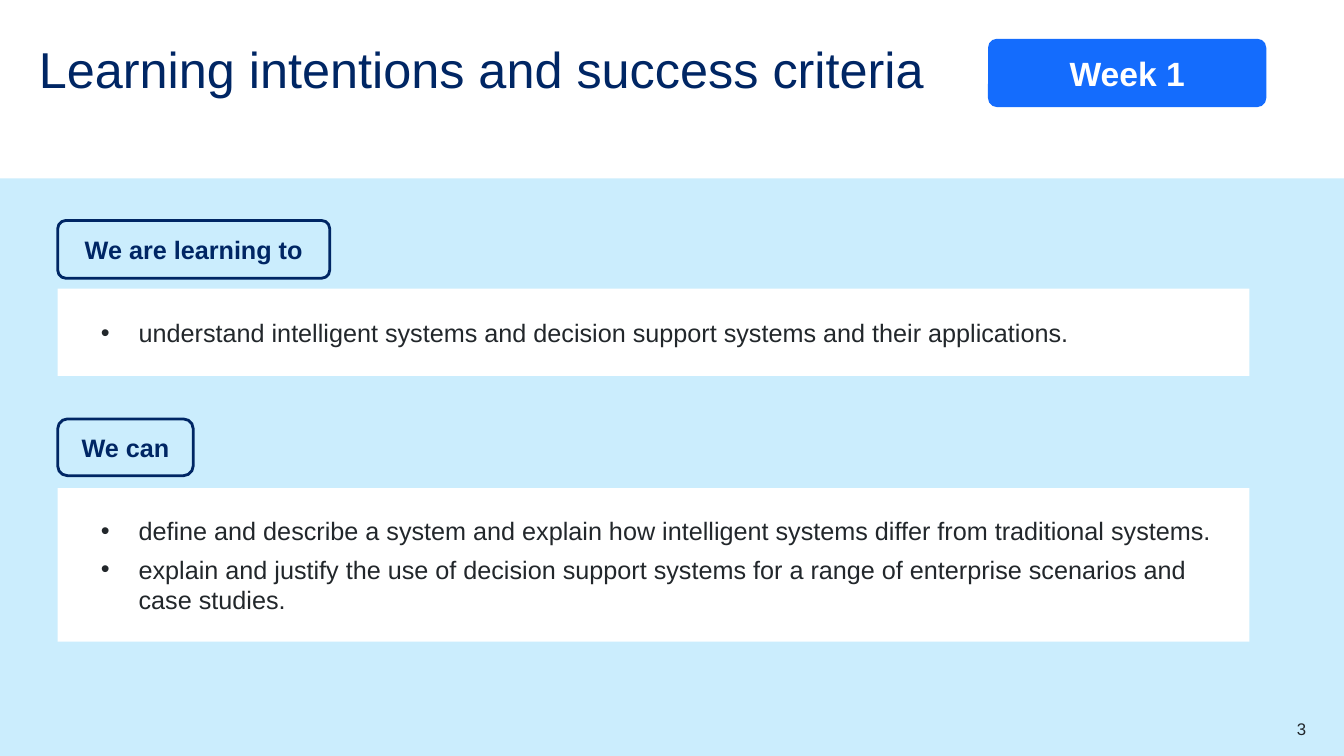
"""Build the learning intentions and success criteria slide for week 1."""
from lxml.etree import SubElement
from pptx import Presentation
from pptx.dml.color import RGBColor
from pptx.enum.shapes import MSO_SHAPE
from pptx.enum.text import MSO_ANCHOR, MSO_AUTO_SIZE, PP_ALIGN
from pptx.oxml.ns import qn
from pptx.util import Pt

PX = 9525
COLORS = {"navy": "002664", "blue": "146CFD", "sky": "CBEDFD", "white": "FFFFFF", "ink": "22272B"}


def add_box(kind, place, fill=None, line=None, corner=None):
    box = page.shapes.add_shape(kind, *[length * PX for length in place])
    box.shadow.inherit = False
    if fill:
        box.fill.solid()
        box.fill.fore_color.rgb = RGBColor.from_string(COLORS[fill])
    else:
        box.fill.background()
    if line:
        box.line.color.rgb = RGBColor.from_string(COLORS[line])
        box.line.width = Pt(2)
    else:
        box.line.fill.background()
    if corner:
        box.adjustments[0] = corner
    return box


def write(box, texts, size, color, bold=False, align=PP_ALIGN.LEFT,
          anchor=MSO_ANCHOR.MIDDLE, insets=(0, 5, 0, 5), spacing=1.0, after=0):
    frame = box.text_frame
    frame.word_wrap = True
    frame.auto_size = MSO_AUTO_SIZE.NONE
    frame.vertical_anchor = anchor
    frame.margin_left, frame.margin_top, frame.margin_right, frame.margin_bottom = [
        inset * PX for inset in insets]
    for index, text in enumerate(texts):
        para = frame.add_paragraph() if index else frame.paragraphs[0]
        para.alignment = align
        para.line_spacing = spacing
        para.space_before = Pt(0)
        para.space_after = Pt(after)
        span = para.add_run()
        span.text = text
        span.font.name = "Arial"
        span.font.size = Pt(size)
        span.font.bold = bold
        span.font.color.rgb = RGBColor.from_string(COLORS[color])


deck = Presentation()
deck.slide_width, deck.slide_height = 1280 * PX, 720 * PX
page = deck.slides.add_slide(deck.slide_layouts.get_by_name("Two Content"))
title, learning_list, success_list = page.placeholders

band = add_box(MSO_SHAPE.RECTANGLE, (0, 170, 1280, 550), fill="sky")
title.element.addprevious(band.element)

title.left, title.top, title.width, title.height = [length * PX for length in (37, 43, 1077, 55)]
write(title, ["Learning intentions and success criteria"], 36, "navy",
      anchor=MSO_ANCHOR.TOP, insets=(0, 0, 0, 0), spacing=0.9)

week = add_box(MSO_SHAPE.ROUNDED_RECTANGLE, (941, 37, 265, 65), fill="blue", corner=0.13)
write(week, ["Week 1"], 24, "white", bold=True, align=PP_ALIGN.CENTER)

sections = [
    ("We are learning to", (55, 210, 259, 55), 0.14, learning_list, 275, 83, 0,
     ["understand intelligent systems and decision support systems and their applications."]),
    ("We can", (55, 399, 129, 54), 0.17, success_list, 465, 146, 6,
     ["define and describe a system and explain how intelligent systems differ from traditional systems.",
      "explain and justify the use of decision support systems for a range of enterprise scenarios"
      " and case studies."]),
]
for heading, place, corner, panel, top, height, after, points in sections:
    label = add_box(MSO_SHAPE.ROUNDED_RECTANGLE, place, line="navy", corner=corner)
    write(label, [heading], 18, "navy", bold=True, align=PP_ALIGN.CENTER)

    panel.left, panel.top, panel.width, panel.height = [
        length * PX for length in (55, top, 1135, height)]
    panel.fill.solid()
    panel.fill.fore_color.rgb = RGBColor.from_string(COLORS["white"])
    write(panel, points, 18, "ink", insets=(41, 5, 10, 5), after=after)
    for para in panel.text_frame.paragraphs:
        properties = para._p.get_or_add_pPr()
        properties.set("marL", str(36 * PX))
        properties.set("indent", str(-36 * PX))
        SubElement(properties, qn("a:buFont"), typeface="Arial")
        SubElement(properties, qn("a:buChar"), char="•")

number = page.shapes.add_textbox(*[length * PX for length in (1168, 684, 76, 19)])
write(number, ["3"], 12, "ink", align=PP_ALIGN.RIGHT, anchor=MSO_ANCHOR.TOP, insets=(0, 0, 0, 0))

deck.save("out.pptx")
